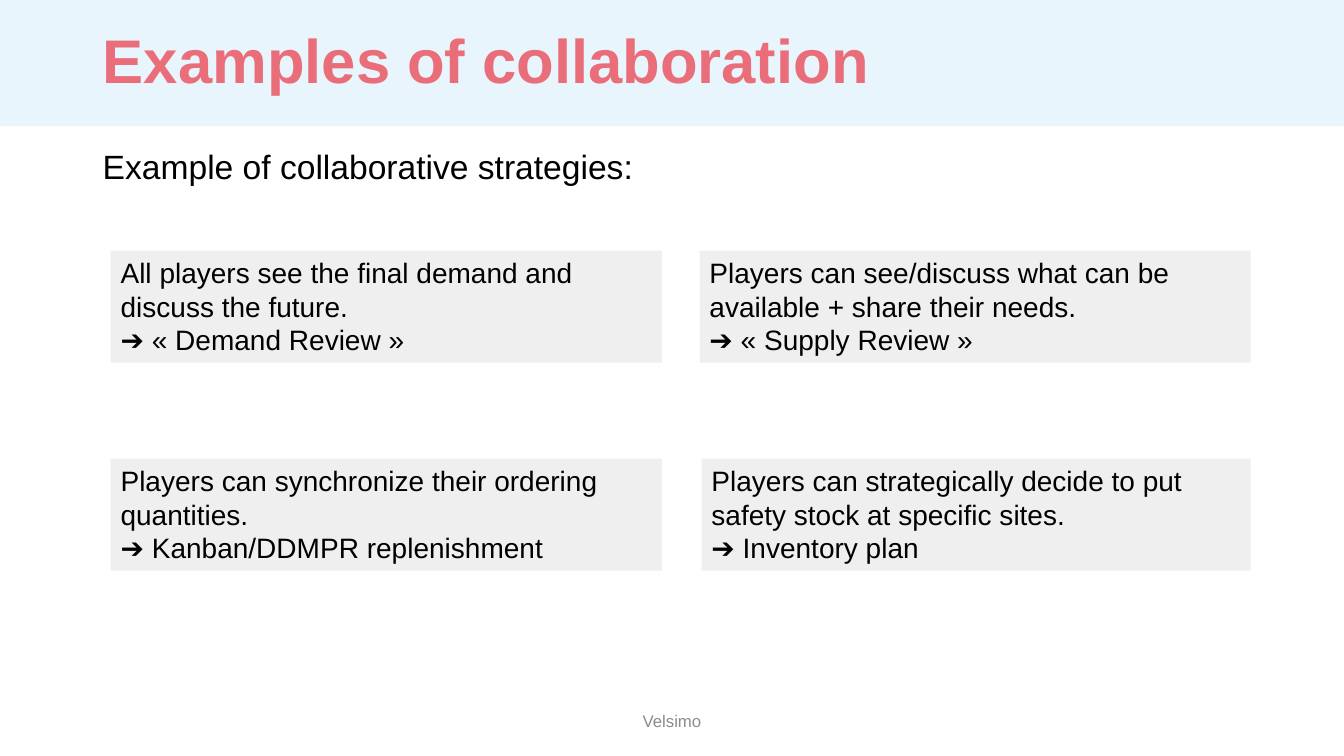
from dataclasses import dataclass

import pptx
import pptx.dml.color
import pptx.enum.shapes
import pptx.enum.text
import pptx.util

Cm = pptx.util.Cm
RGBColor = pptx.dml.color.RGBColor
Align = pptx.enum.text.PP_ALIGN
Anchor = pptx.enum.text.MSO_ANCHOR
AutoSize = pptx.enum.text.MSO_AUTO_SIZE

FONT_NAME = "Arial"
BAND_BLUE = RGBColor(0xE8, 0xF5, 0xFC)
TITLE_CORAL = RGBColor(0xEA, 0x6E, 0x7A)
CARD_GREY = RGBColor(0xEF, 0xEF, 0xEF)
FOOTER_GREY = RGBColor(0x8C, 0x8C, 0x8C)
BLACK = RGBColor(0, 0, 0)

SLIDE_WIDTH = Cm(33.87)
SLIDE_HEIGHT = Cm(19.05)
BAND_HEIGHT = Cm(3.18)
TEXT_LEFT = Cm(2.34)
CARD_HEIGHT = Cm(2.82)
LEFT_COLUMN = Cm(2.79)
TOP_ROW = Cm(6.32)
BOTTOM_ROW = Cm(11.56)


@dataclass(frozen=True)
class StrategyCard:
    left: int
    top: int
    width: int
    description: str
    outcome: str


STRATEGY_CARDS = [
    StrategyCard(LEFT_COLUMN, TOP_ROW, Cm(13.89),
                 "All players see the final demand and discuss the future.",
                 "➔ « Demand Review »"),
    StrategyCard(Cm(17.63), TOP_ROW, Cm(13.89),
                 "Players can see/discuss what can be available + share their needs.",
                 "➔ « Supply Review »"),
    StrategyCard(LEFT_COLUMN, BOTTOM_ROW, Cm(13.89),
                 "Players can synchronize their ordering quantities.",
                 "➔ Kanban/DDMPR replenishment"),
    StrategyCard(Cm(17.68), BOTTOM_ROW, Cm(13.84),
                 "Players can strategically decide to put safety stock at specific sites.",
                 "➔ Inventory plan"),
]


def write_text(shape, lines: list[str], size: int, color: RGBColor,
               alignment=Align.LEFT, anchor=Anchor.TOP,
               bold: bool = False, line_spacing: float = 1.0) -> None:
    text_frame = shape.text_frame
    text_frame.text = "\n".join(lines)
    text_frame.word_wrap = True
    text_frame.auto_size = AutoSize.NONE
    text_frame.vertical_anchor = anchor
    for paragraph in text_frame.paragraphs:
        paragraph.alignment = alignment
        paragraph.line_spacing = line_spacing
        paragraph.font.name = FONT_NAME
        paragraph.font.size = pptx.util.Pt(size)
        paragraph.font.bold = bold
        paragraph.font.color.rgb = color


def add_rectangle(slide, left: int, top: int, width: int, height: int, color: RGBColor):
    shape = slide.shapes.add_shape(
        pptx.enum.shapes.MSO_SHAPE.RECTANGLE, left, top, width, height)
    shape.shadow.inherit = False
    shape.fill.solid()
    shape.fill.fore_color.rgb = color
    shape.line.fill.background()
    return shape


def add_title(slide) -> None:
    title = slide.shapes.title
    title.left, title.top = TEXT_LEFT, 0
    title.width, title.height = Cm(29.21), BAND_HEIGHT
    write_text(title, ["Examples of collaboration"], 44, TITLE_CORAL,
               anchor=Anchor.MIDDLE, bold=True, line_spacing=0.9)
    band = add_rectangle(slide, 0, 0, SLIDE_WIDTH, BAND_HEIGHT, BAND_BLUE)
    title._element.addprevious(band._element)


def add_card(slide, card: StrategyCard) -> None:
    shape = add_rectangle(slide, card.left, card.top, card.width, CARD_HEIGHT, CARD_GREY)
    write_text(shape, [card.description, card.outcome], 20, BLACK)
    shape.text_frame.auto_size = AutoSize.SHAPE_TO_FIT_TEXT


def main() -> None:
    presentation = pptx.Presentation()
    presentation.slide_width = SLIDE_WIDTH
    presentation.slide_height = SLIDE_HEIGHT
    slide = presentation.slides.add_slide(presentation.slide_layouts.get_by_name("Title Only"))

    add_title(slide)
    introduction = slide.shapes.add_textbox(TEXT_LEFT, Cm(3.66), Cm(28.42), Cm(2.13))
    write_text(introduction, ["Example of collaborative strategies:"], 24, BLACK,
               line_spacing=0.9)
    for card in STRATEGY_CARDS:
        add_card(slide, card)
    footer = slide.shapes.add_textbox(Cm(11.22), Cm(17.65), Cm(11.43), Cm(1.02))
    write_text(footer, ["Velsimo"], 12, FOOTER_GREY,
               alignment=Align.CENTER, anchor=Anchor.MIDDLE)

    presentation.save("out.pptx")


if __name__ == "__main__":
    main()
